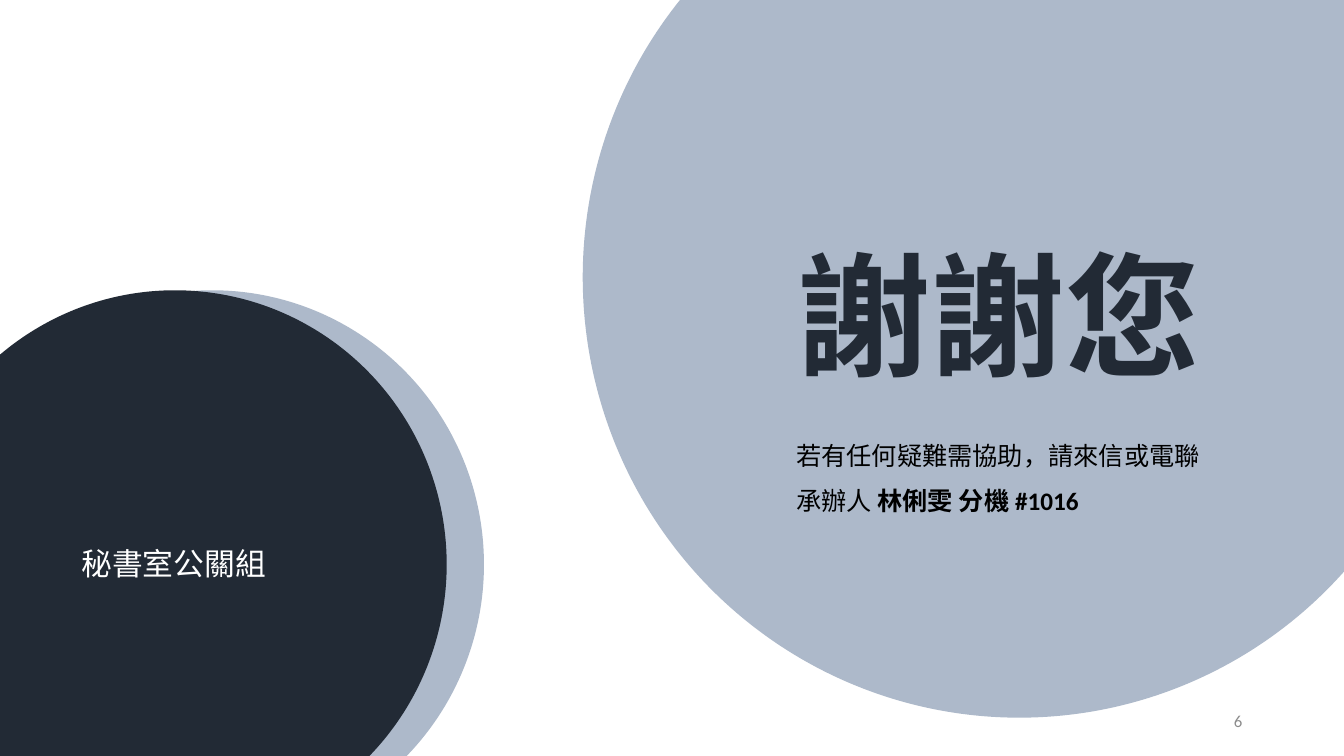
import pptx
import pptx.util
import pptx.dml.color
import pptx.enum.shapes
import pptx.enum.text

Inches = pptx.util.Inches
PP_ALIGN = pptx.enum.text.PP_ALIGN
ANCHOR = pptx.enum.text.MSO_ANCHOR
AUTO_SIZE = pptx.enum.text.MSO_AUTO_SIZE

THEME = {
    "font": "Calibri",
    "colors": {"mist": "ADB9CA", "navy": "222A35", "white": "FFFFFF",
               "black": "000000", "gray": "8C8C8C"},
    "sizes": {"title": 96, "team": 22, "body": 18, "number": 12},
}

CIRCLES = [
    ((5.78, -1.62, 8.66, 8.74), "mist"),
    ((-0.59, 2.88, 5.39, 5.44), "mist"),
    ((-0.96, 2.88, 5.39, 5.44), "navy"),
]

TEXTS = [
    {"box": (7.8, 2.25, 4.24, 1.72), "size": "title", "color": "navy",
     "lines": [[("謝謝您", True)]], "wrap": False},
    {"box": (0.71, 5.36, 2.05, 0.47), "size": "team", "color": "white",
     "lines": [[("秘書室公關組", False)]], "wrap": False},
    {"box": (9.42, 6.95, 3, 0.4), "size": "number", "color": "gray",
     "lines": [[("6", False)]], "align": PP_ALIGN.RIGHT,
     "anchor": ANCHOR.MIDDLE, "fit": AUTO_SIZE.NONE},
    {"box": (7.8, 4.17, 4.4, 0.96), "size": "body", "color": "black",
     "lines": [[("若有任何疑難需協助，請來信或電聯", False)],
               [("承辦人 ", False), ("林俐雯 分機 #1016", True)]],
     "spacing": 1.5},
]


def color(name):
    return pptx.dml.color.RGBColor.from_string(THEME["colors"][name])


def add_circle(slide, box, fill):
    sp = slide.shapes.add_shape(pptx.enum.shapes.MSO_SHAPE.OVAL, *map(Inches, box))
    sp.shadow.inherit = False
    sp.fill.solid()
    sp.fill.fore_color.rgb = color(fill)
    sp.line.fill.background()


def add_text(slide, item):
    tf = slide.shapes.add_textbox(*map(Inches, item["box"])).text_frame
    tf.word_wrap = item.get("wrap", True)
    tf.auto_size = item.get("fit", AUTO_SIZE.SHAPE_TO_FIT_TEXT)
    tf.vertical_anchor = item.get("anchor", ANCHOR.TOP)
    for i, line in enumerate(item["lines"]):
        p = tf.add_paragraph() if i else tf.paragraphs[0]
        p.alignment = item.get("align", PP_ALIGN.LEFT)
        p.line_spacing = item.get("spacing")
        p.font.name = THEME["font"]
        p.font.size = pptx.util.Pt(THEME["sizes"][item["size"]])
        p.font.color.rgb = color(item["color"])
        for text, bold in line:
            r = p.add_run()
            r.text = text
            r.font.name = THEME["font"]
            r.font.size = p.font.size
            r.font.color.rgb = color(item["color"])
            r.font.bold = bold


def main():
    prs = pptx.Presentation()
    prs.slide_width, prs.slide_height = Inches(13.33), Inches(7.5)
    slide = prs.slides.add_slide(prs.slide_layouts[6])
    for box, fill in CIRCLES:
        add_circle(slide, box, fill)
    for item in TEXTS:
        add_text(slide, item)
    prs.save("out.pptx")


if __name__ == "__main__":
    main()
